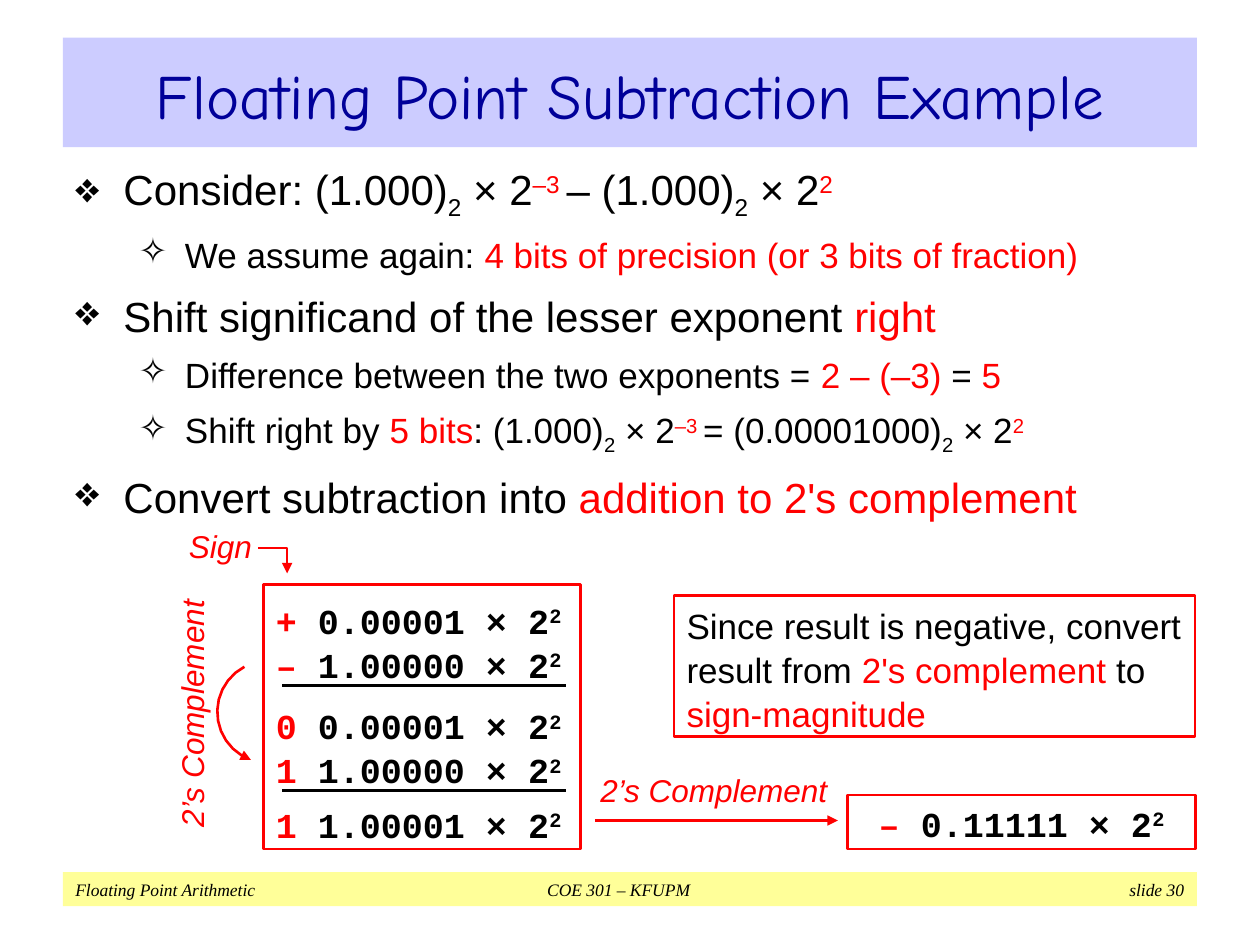
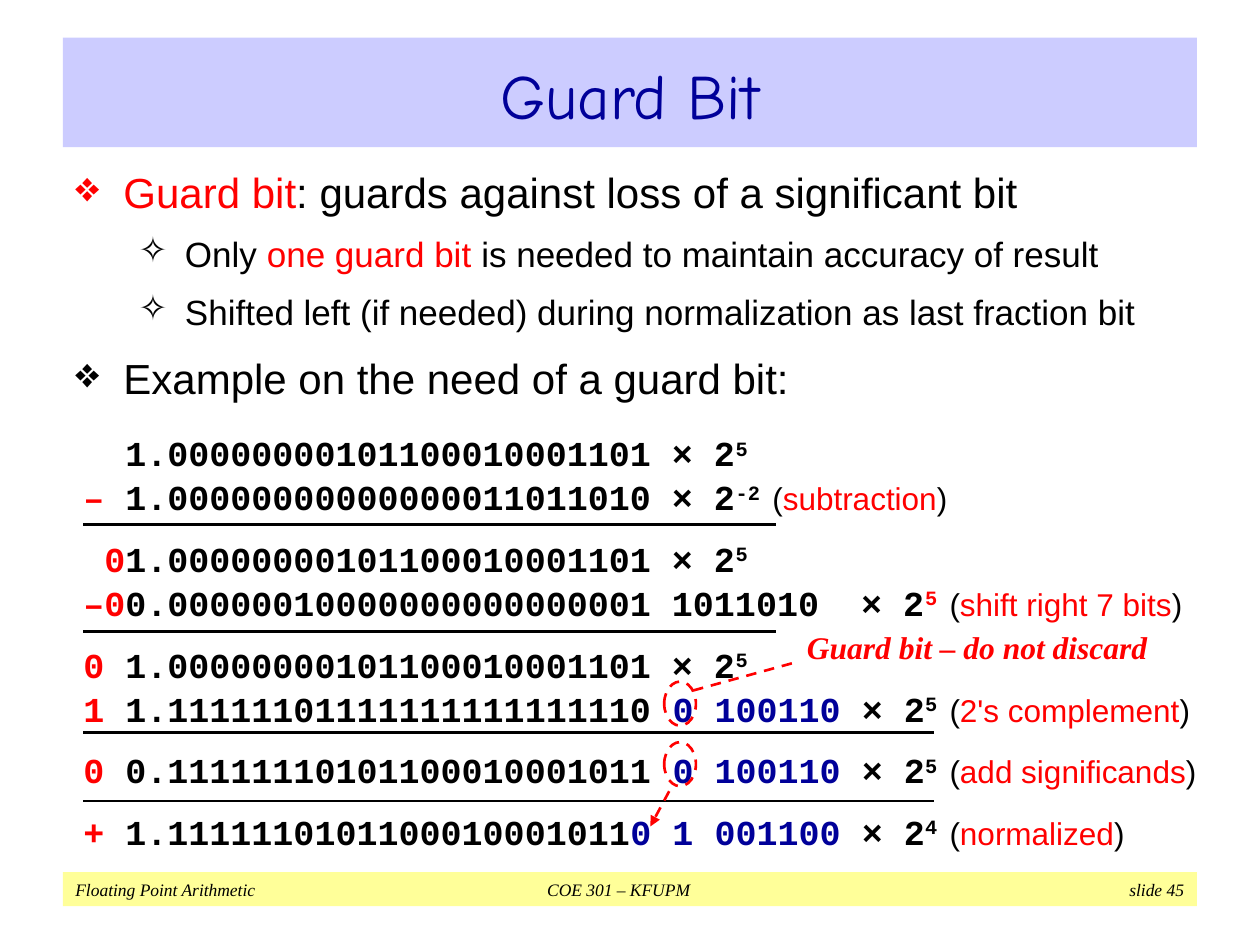
import math

import pptx
import pptx.dml.color
import pptx.enum.dml
import pptx.enum.shapes
import pptx.enum.text
import pptx.oxml.ns
import pptx.util
from lxml import etree

Cm, Pt = pptx.util.Cm, pptx.util.Pt
RGBColor = pptx.dml.color.RGBColor
SHAPE = pptx.enum.shapes.MSO_SHAPE
STRAIGHT = pptx.enum.shapes.MSO_CONNECTOR.STRAIGHT
ALIGN = pptx.enum.text.PP_ALIGN
ANCHOR = pptx.enum.text.MSO_ANCHOR
qn = pptx.oxml.ns.qn

BLACK = RGBColor(0, 0, 0)
WHITE = RGBColor(255, 255, 255)
RED = RGBColor(255, 0, 0)
NAVY = RGBColor(0, 0, 0x99)
LAVENDER = RGBColor(0xCC, 0xCC, 255)
YELLOW = RGBColor(255, 255, 0x99)

TITLE = {"name": "Comic Neue", "size": Pt(36), "color": NAVY}
FOOTER = {"name": "Times New Roman", "size": Pt(10), "italic": True}
BODY = {"name": "Arial", "size": Pt(20)}
BITS = {"name": "Courier New", "size": Pt(20), "bold": True}
LABEL = {"name": "Arial", "size": Pt(18), "italic": True, "color": RED}
CALLOUT = LABEL | {"name": "Times New Roman", "bold": True}
MARKS = {
    "red": {"color": RED},
    "navy": {"color": NAVY},
    "sup": {"baseline": 30000},
    "sub": {"baseline": -25000},
    "big": {"size": Pt(24)},
    "note": {"name": "Arial", "size": Pt(18), "bold": False},
}


def write(slide, box, paragraphs, look, centred=False, middle=False, inset=True):
    """Add a text box; a paragraph is (points before, [(text, marks), ...])."""
    block = slide.shapes.add_textbox(*map(Cm, box))
    frame = block.text_frame
    frame.word_wrap = True
    frame.vertical_anchor = ANCHOR.MIDDLE if middle else ANCHOR.TOP
    if not inset:
        frame.margin_left = frame.margin_right = 0
        frame.margin_top = frame.margin_bottom = 0
    for index, (gap, runs) in enumerate(paragraphs):
        paragraph = frame.add_paragraph() if index else frame.paragraphs[0]
        paragraph.alignment = ALIGN.CENTER if centred else ALIGN.LEFT
        paragraph.line_spacing = 1.05
        paragraph.space_before = Pt(gap if index else 0)
        for text, marks in runs:
            run = paragraph.add_run()
            run.text = text
            style = {"color": BLACK} | look
            for mark in marks.split():
                style |= MARKS[mark]
            run.font.color.rgb = style.pop("color")
            if "baseline" in style:
                run.font._element.set("baseline", str(style.pop("baseline")))
            for attribute, value in style.items():
                setattr(run.font, attribute, value)
    return block


def stroke(shape, color, width=1.5, dashed=False, arrow=False):
    """Outline a shape or connector, without fill or shadow."""
    if hasattr(shape, "fill"):
        shape.fill.background()
    shape.line.color.rgb = color
    shape.line.width = Pt(width)
    if dashed:
        shape.line.dash_style = pptx.enum.dml.MSO_LINE.DASH
    properties = shape._element.spPr
    if arrow:
        etree.SubElement(properties.find(qn("a:ln")), qn("a:tailEnd"), type="triangle")
    etree.SubElement(properties, qn("a:effectLst"))


deck = pptx.Presentation()
deck.slide_width, deck.slide_height = Cm(25.4), Cm(19.05)

# What both slides share: footer band, title band and bulleted outline
# Outline lines are (level, runs)
subtraction_outline = [
    (0, [("Consider: (1.000)", ""), ("2", "sub"), (" × 2", ""), ("–3 ", "red sup"),
         ("– (1.000)", ""), ("2", "sub"), (" × 2", ""), ("2", "red sup")]),
    (1, [("We assume again: ", ""),
         ("4 bits of precision (or 3 bits of fraction)", "red")]),
    (0, [("Shift significand of the lesser exponent ", ""), ("right", "red")]),
    (1, [("Difference between the two exponents = ", ""), ("2 – (–3)", "red"),
         (" = ", ""), ("5", "red")]),
    (1, [("Shift right by ", ""), ("5 bits", "red"), (": (1.000)", ""), ("2", "sub"),
         (" × 2", ""), ("–3 ", "red sup"), ("= (0.00001000)", ""), ("2", "sub"),
         (" × 2", ""), ("2", "red sup")]),
    (0, [("Convert subtraction into ", ""), ("addition to 2's complement", "red")]),
]
guard_outline = [
    (0, [("Guard bit", "red"), (": guards against loss of a significant bit", "")]),
    (1, [("Only ", ""), ("one guard bit", "red"),
         (" is needed to maintain accuracy of result", "")]),
    (1, [("Shifted left (if needed) during normalization as last fraction bit", "")]),
    (0, [("Example on the need of a guard bit:", "")]),
]
LEVELS = [  # bullet, left margin, hanging indent, extra mark, text size
    ("❖", Cm(0.97), Cm(-0.97), " big", 24),
    ("✧", Cm(2.21), Cm(-0.94), "", 20),
]
pages = [
    ("Floating Point Subtraction Example", 30, 3.12, 0.3, subtraction_outline),
    ("Guard Bit", 45, 3.18, 0.4, guard_outline),
]
slides = []
for heading, number, outline_top, spacing, outline in pages:
    slide = deck.slides.add_slide(deck.slide_layouts[6])
    slides.append(slide)

    footer_text = f"Floating Point Arithmetic\tCOE 301 – KFUPM\t slide {number}"
    footer = write(slide, (1.27, 17.58, 22.86, 0.69), [(0, [(footer_text, "")])],
                   FOOTER, middle=True)
    footer.fill.solid()
    footer.fill.fore_color.rgb = YELLOW
    footer_properties = footer.text_frame.paragraphs[0]._p.get_or_add_pPr()
    tabs = etree.SubElement(footer_properties, qn("a:tabLst"))
    for position, side in ((Cm(10.95), "ctr"), (Cm(22.35), "r")):
        etree.SubElement(tabs, qn("a:tab"), pos=str(position), algn=side)

    title = write(slide, (1.27, 0.76, 22.86, 2.21), [(0, [(heading, "")])],
                  TITLE, centred=True, middle=True)
    title.fill.solid()
    title.fill.fore_color.rgb = LAVENDER

    lines = [
        (spacing * LEVELS[level][4],
         [(text, marks + LEVELS[level][3]) for text, marks in runs])
        for level, runs in outline
    ]
    body = write(slide, (1.27, outline_top, 22.86, 14.27), lines, BODY)
    for paragraph, (level, _) in zip(body.text_frame.paragraphs, outline):
        bullet, margin, indent = LEVELS[level][:3]
        paragraph.level = level
        properties = paragraph._p.get_or_add_pPr()
        properties.set("marL", str(margin))
        properties.set("indent", str(indent))
        etree.SubElement(properties, qn("a:buChar"), char=bullet)

subtraction, guard = slides

# Subtraction example: the worked sum
sum_rows = [
    (0, "+", "0.00001"),
    (0, "–", "1.00000"),
    (10, "0", "0.00001"),
    (0, "1", "1.00000"),
    (6, "1", "1.00001"),
]
worked_sum = [
    (gap, [(sign, "red"), (f" {digits} × 2", ""), ("2", "sup")])
    for gap, sign, digits in sum_rows
]
write(subtraction, (5.31, 11.91, 6.3, 5.16), worked_sum, BITS)
sum_frame = subtraction.shapes.add_shape(
    SHAPE.RECTANGLE, Cm(5.31), Cm(11.79), Cm(6.4), Cm(5.33))
stroke(sum_frame, RED)

# Sign pointer and the curved complement arrow
sign_path = [(5.21, 11.05), (5.79, 11.05), (5.79, 11.56)]
complement_path = [
    (5.41 + 1.03 * math.cos(math.radians(angle)),
     14.35 + 1.03 * math.sin(math.radians(angle)))
    for angle in range(242, 109, -12)
]
for path_points, width in ((sign_path, 1), (complement_path, 1.5)):
    points = [(Cm(x), Cm(y)) for x, y in path_points]
    outline_builder = subtraction.shapes.build_freeform(*points[0])
    outline_builder.add_line_segments(points[1:], close=False)
    stroke(outline_builder.convert_to_shape(), RED, width, arrow=True)

for text, box, centred, rotation in [
    ("Sign", (3.81, 10.54, 1.65, 0.89), False, 0),
    ("2’s Complement", (1.32, 13.94, 5.05, 0.89), True, 270),
    ("2’s Complement", (11.89, 15.32, 5, 1.19), True, 0),
]:
    label = write(subtraction, box, [(0, [(text, "")])], LABEL,
                  centred=centred, middle=True, inset=False)
    label.rotation = rotation

# Explanation and final result
explanation = write(
    subtraction, (13.59, 12.01, 10.5, 2.84),
    [(0, [("Since result is negative, convert result from", ""),
          (" 2's complement ", "red"), ("to", ""), (" sign-magnitude", "red")])],
    BODY)
result = write(
    subtraction, (17.09, 16.03, 7.01, 1.09),
    [(0, [("–", "red"), (" 0.11111 × 2", ""), ("2", "sup")])],
    BITS, centred=True, middle=True)
for framed in (explanation, result):
    stroke(framed, RED)

# Guard bit: gap, sign, digits, bits from the guard bit on, exponent, its marks, note
guard_rows = [
    (0, "  ", "1.00000000101100010001101", "", "5", "sup", ""),
    (0, "– ", "1.00000000000000011011010", "", "-2 ", "sup", "subtraction"),
    (10, " 0", "1.00000000101100010001101", "", "5", "sup", ""),
    (0, "–0", "0.00000010000000000000001 1011010 ", "", "5 ", "red sup",
     "shift right 7 bits"),
    (10, "0 ", "1.00000000101100010001101", "", "5", "sup", ""),
    (0, "1 ", "1.11111101111111111111110 ", "0 100110", "5 ", "sup", "2's complement"),
    (10, "0 ", "0.11111110101100010001011 ", "0 100110", "5 ", "sup",
     "add significands"),
    (10, "+ ", "1.1111110101100010001011", "0 1 001100", "4 ", "sup", "normalized"),
]
calculation = []
for gap, sign, digits, guard_bits, exponent, exponent_marks, note in guard_rows:
    runs = [(sign, "red"), (digits, ""), (guard_bits, "navy"), (" × 2", ""),
            (exponent, exponent_marks)]
    if note:
        runs += [("(", "note"), (note, "note red"), (")", "note")]
    calculation.append((gap, [run for run in runs if run[0]]))
write(guard, (1.68, 8.66, 22.73, 8.46), calculation, BITS, inset=False)

callout = write(guard, (16.13, 12.7, 7.14, 0.64),
                [(0, [("Guard bit – do not discard", "")])],
                CALLOUT, centred=True, middle=True, inset=False)
callout.fill.solid()
callout.fill.fore_color.rgb = WHITE
for ring_top in (13.74, 14.96):
    ring = guard.shapes.add_shape(
        SHAPE.OVAL, Cm(13.39), Cm(ring_top), Cm(0.64), Cm(0.89))
    stroke(ring, RED, dashed=True)

# Sum rules and straight arrows: slide, start, end, colour, dashed, arrow
straight_lines = [
    (subtraction, (5.69, 13.82), (11.4, 13.82), BLACK, False, False),
    (subtraction, (5.69, 15.93), (11.4, 15.93), BLACK, False, False),
    (subtraction, (11.99, 16.54), (16.89, 16.54), RED, False, True),
    (guard, (1.68, 10.57), (15.65, 10.57), BLACK, False, False),
    (guard, (1.68, 12.73), (15.65, 12.73), BLACK, False, False),
    (guard, (1.68, 14.76), (18.82, 14.76), BLACK, False, False),
    (guard, (1.68, 16.15), (18.82, 16.15), BLACK, False, False),
    (guard, (13.49, 15.95), (13.11, 16.66), RED, True, True),
    (guard, (13.97, 13.92), (16.08, 13.34), RED, True, False),
]
for slide, start, end, color, dashed, arrow in straight_lines:
    line = slide.shapes.add_connector(STRAIGHT, *map(Cm, start + end))
    stroke(line, color, dashed=dashed, arrow=arrow)

deck.save("out.pptx")
